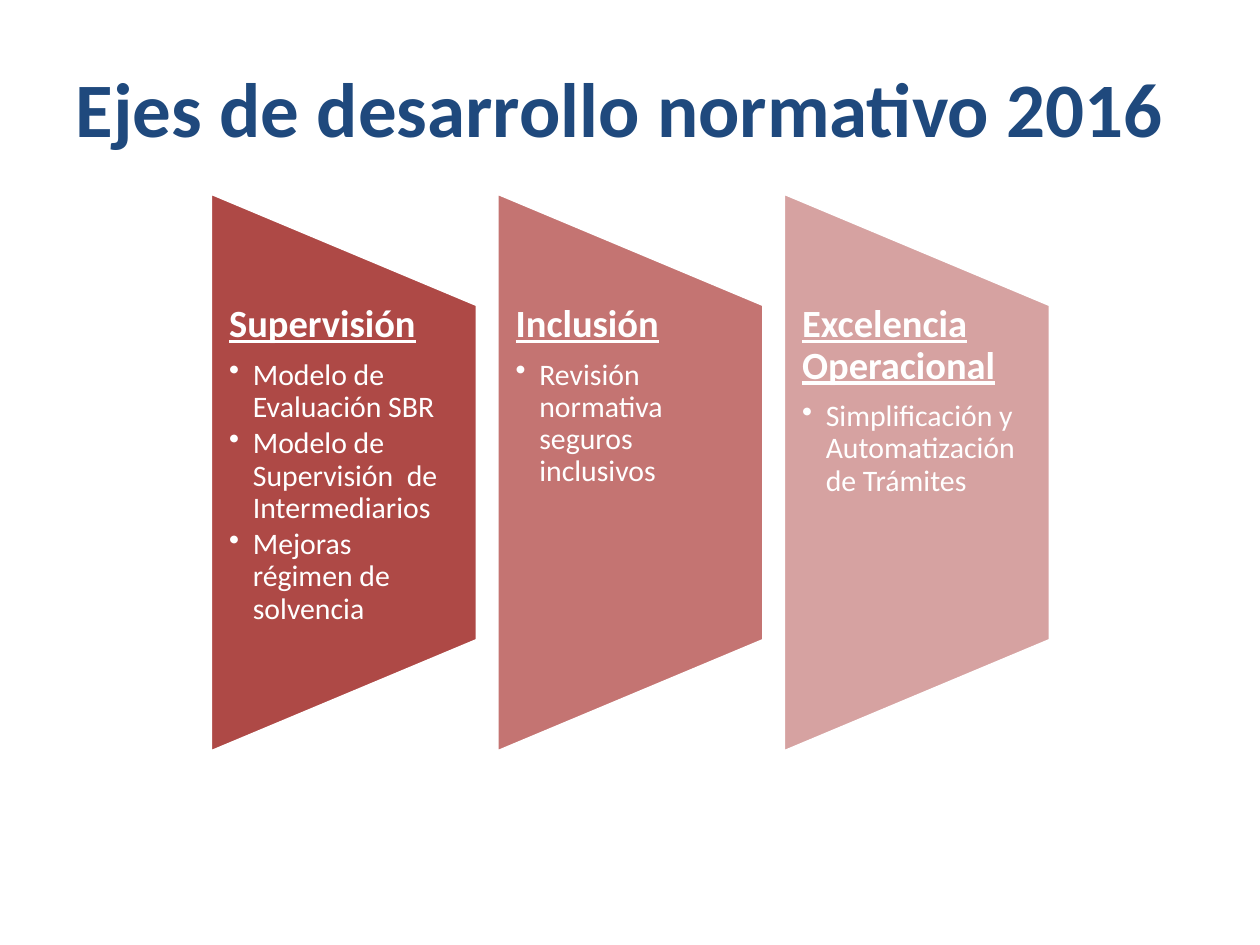
from dataclasses import dataclass

from lxml import etree
from pptx import Presentation
from pptx.dml.color import RGBColor
from pptx.enum.shapes import MSO_SHAPE
from pptx.enum.text import MSO_ANCHOR, MSO_AUTO_SIZE, PP_ALIGN
from pptx.oxml.ns import qn
from pptx.shapes.group import GroupShape
from pptx.slide import Slide
from pptx.text.text import TextFrame
from pptx.util import Pt

PANEL_SHAPE = MSO_SHAPE.FLOWCHART_MANUAL_OPERATION
LEFT = PP_ALIGN.LEFT
TOP, MIDDLE = MSO_ANCHOR.TOP, MSO_ANCHOR.MIDDLE
NO_AUTOFIT = MSO_AUTO_SIZE.NONE
TITLE_ONLY = 5


@dataclass(frozen=True)
class Theme:
    font: str = "Calibri"
    title_color: str = "1F497D"
    light: str = "FFFFFF"
    title_size: float = 44
    heading_size: float = 22
    bullet_size: float = 17
    outline: float = 2
    line_spacing: float = 0.9


@dataclass(frozen=True)
class Axis:
    heading: str
    bullets: tuple[str, ...]
    fill: str


THEME = Theme()
AXES = (
    Axis(
        "Supervisión",
        (
            "Modelo de Evaluación SBR",
            "Modelo de Supervisión  de Intermediarios",
            "Mejoras régimen de solvencia",
        ),
        "AE4946",
    ),
    Axis("Inclusión", ("Revisión normativa seguros inclusivos",), "C47472"),
    Axis("Excelencia Operacional", ("Simplificación y Automatización de Trámites",), "D6A2A1"),
)

FIRST_LEFT = 120.2
PANEL_STEP = 163.7
PANEL_WIDTH = 152.6
PANEL_HEIGHT = 319.7
TEXT_HEIGHT = 192
MIDDLE_Y = 270
BULLET_INDENT = 13.5


def add_title(page: Slide, text: str) -> None:
    title = page.shapes.title
    title.left, title.top, title.width, title.height = Pt(36), Pt(15.8), Pt(659.5), Pt(90)
    frame = title.text_frame
    frame.auto_size = NO_AUTOFIT
    frame.vertical_anchor = MIDDLE
    para = frame.paragraphs[0]
    para.alignment = LEFT
    span = para.add_run()
    span.text = text
    span.font.name = THEME.font
    span.font.size = Pt(THEME.title_size)
    span.font.bold = True
    span.font.color.rgb = RGBColor.from_string(THEME.title_color)


def add_panel(group: GroupShape, left: float, fill: str) -> None:
    """Draw the trapezoid on its side, turned about its centre."""
    panel = group.shapes.add_shape(
        PANEL_SHAPE,
        Pt(left + (PANEL_WIDTH - PANEL_HEIGHT) / 2),
        Pt(MIDDLE_Y - PANEL_WIDTH / 2),
        Pt(PANEL_HEIGHT),
        Pt(PANEL_WIDTH),
    )
    panel.rotation = 270
    panel.shadow.inherit = False
    panel.fill.solid()
    panel.fill.fore_color.rgb = RGBColor.from_string(fill)
    panel.line.color.rgb = RGBColor.from_string(THEME.light)
    panel.line.width = Pt(THEME.outline)


def add_line(frame: TextFrame, text: str, is_heading: bool) -> None:
    size = THEME.heading_size if is_heading else THEME.bullet_size
    para = frame.paragraphs[0] if is_heading else frame.add_paragraph()
    if not is_heading:
        para.level = 1
        properties = para._p.get_or_add_pPr()
        properties.set("marL", str(Pt(BULLET_INDENT)))
        properties.set("indent", str(Pt(-BULLET_INDENT)))
        etree.SubElement(properties, qn("a:buChar"), char="•")
    para.alignment = LEFT
    para.line_spacing = THEME.line_spacing
    para.space_after = Pt(size * (0.35 if is_heading else 0.15))
    span = para.add_run()
    span.text = text
    span.font.name = THEME.font
    span.font.size = Pt(size)
    span.font.bold = is_heading
    span.font.underline = is_heading
    span.font.color.rgb = RGBColor.from_string(THEME.light)


def add_axis(group: GroupShape, left: float, axis: Axis) -> None:
    add_panel(group, left, axis.fill)
    box = group.shapes.add_textbox(
        Pt(left), Pt(MIDDLE_Y - TEXT_HEIGHT / 2), Pt(PANEL_WIDTH), Pt(TEXT_HEIGHT)
    )
    frame = box.text_frame
    frame.word_wrap = True
    frame.auto_size = NO_AUTOFIT
    frame.vertical_anchor = TOP
    frame.margin_left, frame.margin_right = Pt(10.8), Pt(11.2)
    frame.margin_top = frame.margin_bottom = Pt(0)
    add_line(frame, axis.heading, True)
    for bullet in axis.bullets:
        add_line(frame, bullet, False)


def main() -> None:
    deck = Presentation()
    deck.slide_width, deck.slide_height = Pt(720), Pt(540)
    page = deck.slides.add_slide(deck.slide_layouts[TITLE_ONLY])
    add_title(page, "Ejes de desarrollo normativo 2016")
    group = page.shapes.add_group_shape()
    for index, axis in enumerate(AXES):
        add_axis(group, FIRST_LEFT + index * PANEL_STEP, axis)
    deck.save("out.pptx")


if __name__ == "__main__":
    main()
